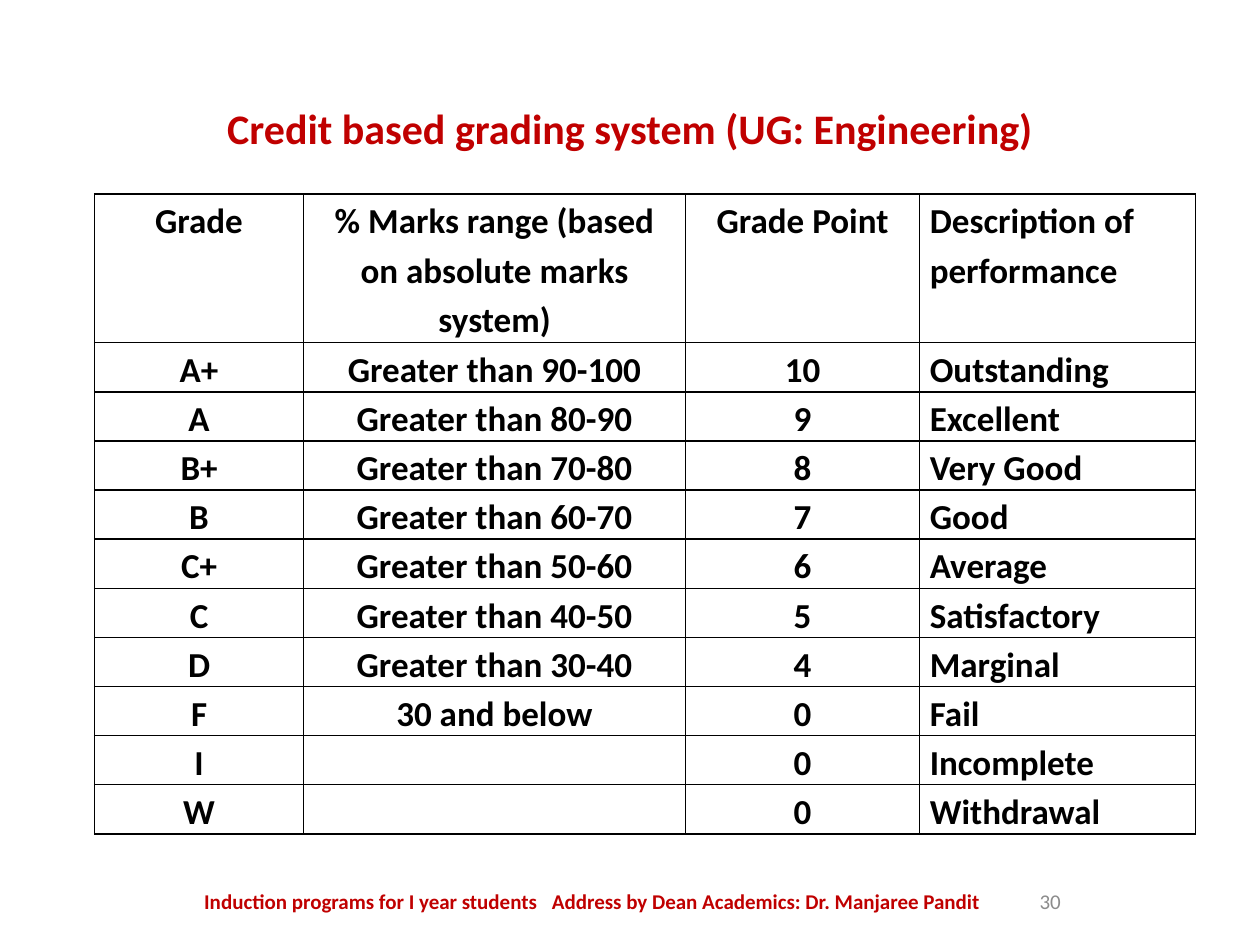
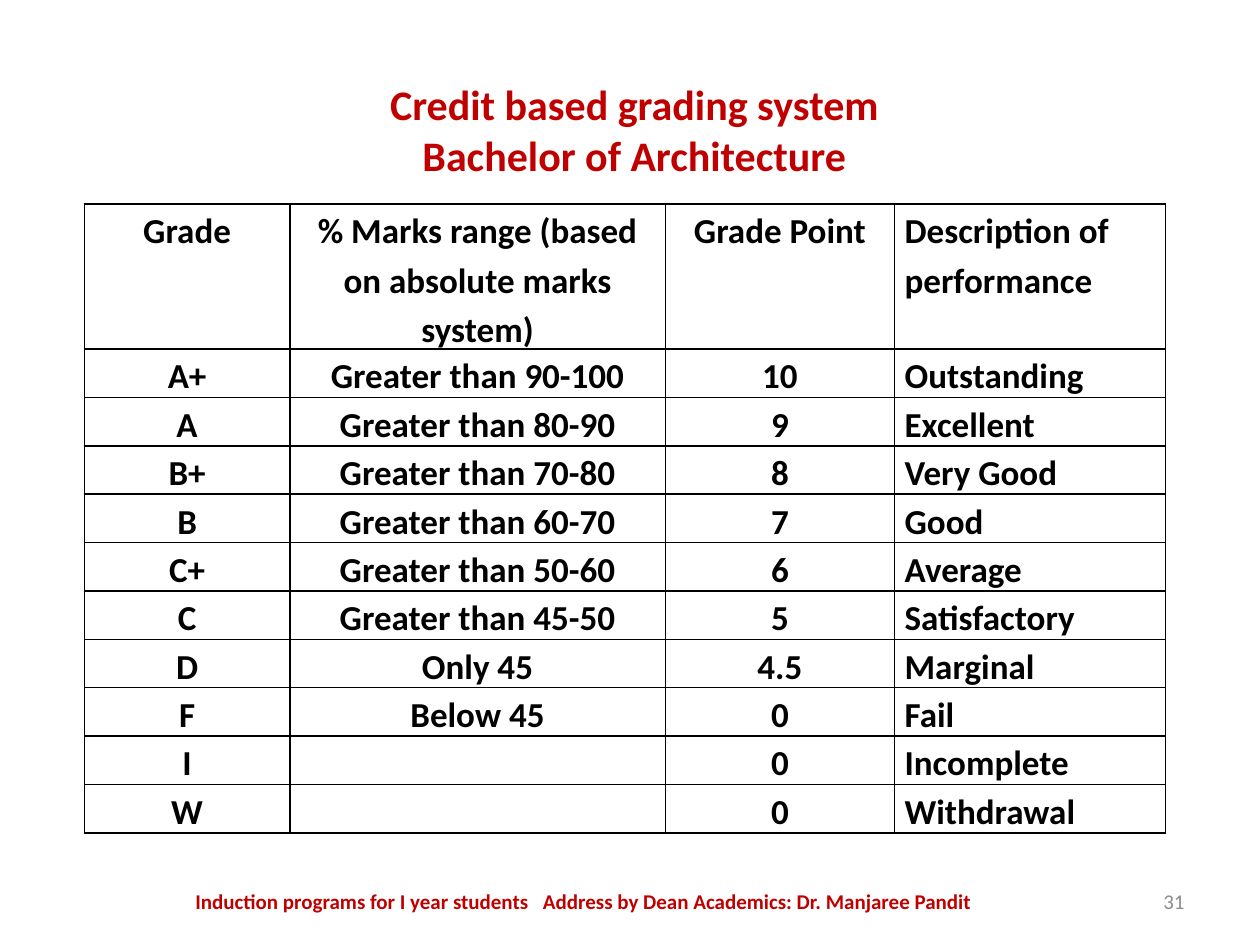
from dataclasses import dataclass

from pptx import Presentation
from pptx import util as u
from pptx.dml.color import RGBColor
from pptx.enum import text
from pptx.oxml import parse_xml
from pptx.oxml.ns import nsdecls

FONT = "Calibri"
RED = RGBColor(0xC0, 0x00, 0x00)
BLACK = RGBColor(0x00, 0x00, 0x00)
GRAY = RGBColor(0x8C, 0x8C, 0x8C)
LEFT, CENTER, RIGHT = text.PP_ALIGN.LEFT, text.PP_ALIGN.CENTER, text.PP_ALIGN.RIGHT

FOOTER = ("Induction programs for I year students", " ",
          "Address by Dean Academics: Dr. Manjaree Pandit")
HEADINGS = ("Grade", "% Marks range (based on absolute marks system)",
            "Grade Point", "Description of performance")
GRADES = ("A+", "A", "B+", "B", "C+", "C", "D", "F", "I", "W")
DESCRIPTIONS = ("Outstanding", "Excellent", "Very Good", "Good", "Average",
                "Satisfactory", "Marginal", "Fail", "Incomplete", "Withdrawal")


@dataclass(frozen=True)
class Box:
    left: float
    top: float
    width: float
    height: float


@dataclass(frozen=True)
class GradingSlide:
    title: str
    title_box: Box
    table_left: float
    table_top: float
    table_height: float
    columns: tuple[float, ...]
    header_height: float
    row_height: float
    marks: tuple[str, ...]
    points: tuple[str, ...]
    footer_left: float
    number: str
    number_align: text.PP_ALIGN


SLIDES = (
    GradingSlide(
        "Credit based grading system (UG: Engineering)", Box(1.3, 0.76, 7.4, 0.5),
        0.75, 1.54, 5.08, (1.66, 3.03, 1.86, 2.19), 1.18, 0.39,
        tuple(f"Greater than {m}-{m + 10}" for m in range(90, 20, -10))
        + ("30 and below", "", ""),
        ("10", "9", "8", "7", "6", "5", "4", "0", "0", "0"),
        0.33, "30", CENTER),
    GradingSlide(
        "Credit based grading system\nBachelor of Architecture",
        Box(1.69, 0.57, 6.69, 0.91),
        0.67, 1.62, 4.98, (1.63, 2.98, 1.82, 2.15), 0, 0,
        tuple(f"Greater than {m}-{m + 10}" for m in range(90, 40, -10))
        + ("Greater than 45-50", "Only 45", "Below 45", "", ""),
        ("10", "9", "8", "7", "6", "5", "4.5", "0", "0", "0"),
        0.26, "31", RIGHT),
)


def style(p, size: float, color: RGBColor, bold: bool, align: text.PP_ALIGN) -> None:
    p.alignment = align
    p.font.name = FONT
    p.font.size = u.Pt(size)
    p.font.bold = bold
    p.font.color.rgb = color


def add_title(s, title: str, box: Box) -> None:
    sp = s.shapes.title
    sp.left, sp.top = u.Inches(box.left), u.Inches(box.top)
    sp.width, sp.height = u.Inches(box.width), u.Inches(box.height)
    tf = sp.text_frame
    tf.text = title
    tf.auto_size = text.MSO_AUTO_SIZE.NONE
    tf.vertical_anchor = text.MSO_ANCHOR.MIDDLE
    for p in tf.paragraphs:
        style(p, 24, RED, True, CENTER)


def add_footer_text(s, left: float, width: float, parts: tuple[str, ...],
                    color: RGBColor, bold: bool, align: text.PP_ALIGN) -> None:
    sp = s.shapes.add_textbox(u.Inches(left), u.Inches(6.95),
                              u.Inches(width), u.Inches(0.4))
    tf = sp.text_frame
    tf.word_wrap = True
    tf.vertical_anchor = text.MSO_ANCHOR.MIDDLE
    p = tf.paragraphs[0]
    style(p, 12, color, bold, align)
    for part in parts:
        r = p.add_run()
        r.text = part
        if part == " ":
            r._r.get_or_add_rPr().set("spc", "540")


def format_cell(cell, value: str, align: text.PP_ALIGN) -> None:
    cell.margin_left = cell.margin_right = u.Inches(0.08)
    cell.margin_top = cell.margin_bottom = 0
    tc_pr = cell._tc.get_or_add_tcPr()
    for side in ("lnL", "lnR", "lnT", "lnB"):
        tc_pr.append(parse_xml(
            f'<a:{side} {nsdecls("a")} w="{u.Pt(1)}"><a:solidFill>'
            f'<a:srgbClr val="{BLACK}"/></a:solidFill></a:{side}>'))
    cell.fill.background()
    p = cell.text_frame.paragraphs[0]
    p.line_spacing = 1.15
    style(p, 20, BLACK, True, align)
    if value:
        p.add_run().text = value


def add_grade_table(s, spec: GradingSlide) -> None:
    rows = [HEADINGS, *zip(GRADES, spec.marks, spec.points, DESCRIPTIONS)]
    frame = s.shapes.add_table(
        len(rows), len(HEADINGS), u.Inches(spec.table_left), u.Inches(spec.table_top),
        u.Inches(sum(spec.columns)), u.Inches(spec.table_height))
    table = frame.table
    table.first_row = table.horz_banding = False
    for column, width in zip(table.columns, spec.columns):
        column.width = u.Inches(width)
    for i, values in enumerate(rows):
        table.rows[i].height = u.Inches(spec.row_height if i else spec.header_height)
        for j, value in enumerate(values):
            format_cell(table.cell(i, j), value, LEFT if j == 3 else CENTER)
    frame.height = u.Inches(spec.table_height)


def main() -> None:
    prs = Presentation()
    prs.slide_width, prs.slide_height = u.Inches(10), u.Inches(7.5)
    for spec in SLIDES:
        s = prs.slides.add_slide(prs.slide_layouts[5])
        add_title(s, spec.title, spec.title_box)
        add_footer_text(s, spec.footer_left, 8.74, FOOTER, RED, True, CENTER)
        add_footer_text(s, 7.17, 2.33, (spec.number,), GRAY, False, spec.number_align)
        add_grade_table(s, spec)
    prs.save("out.pptx")


if __name__ == "__main__":
    main()
